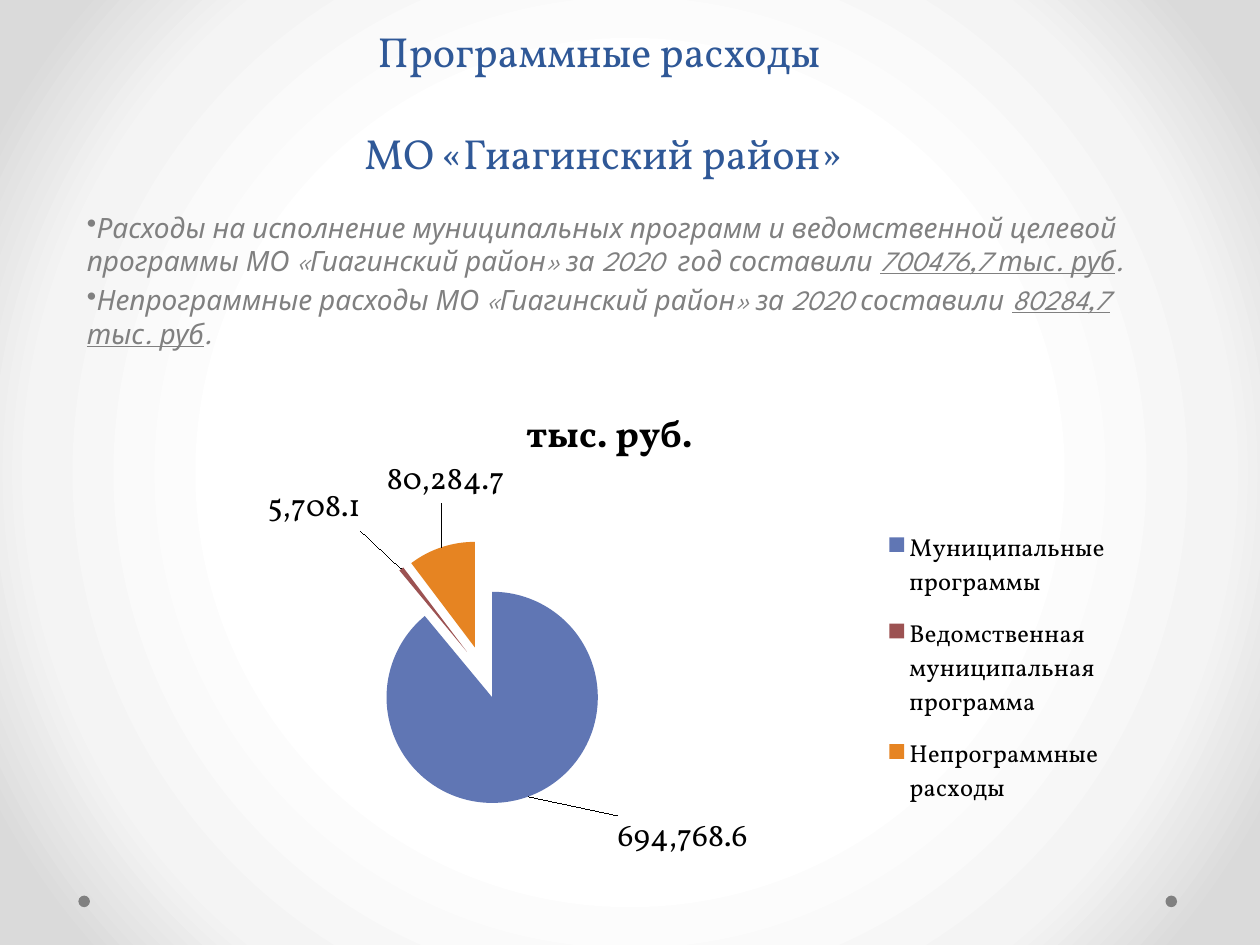
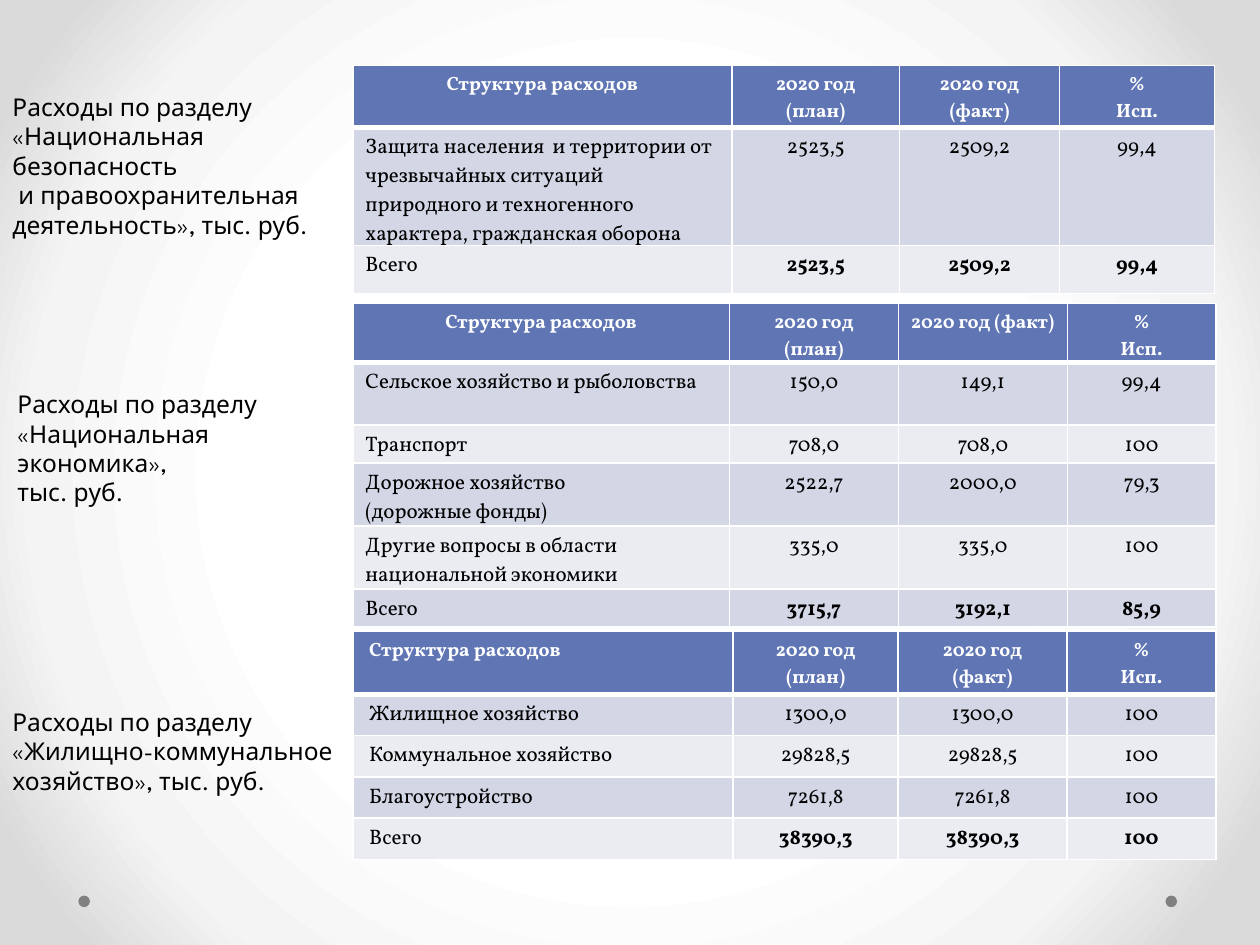
from dataclasses import dataclass

from lxml import etree
from pptx import Presentation
from pptx import util as u
from pptx.chart import data as cd
from pptx.dml.color import RGBColor
from pptx.enum import chart as ce
from pptx.enum import shapes, text
from pptx.oxml import parse_xml
from pptx.oxml import ns

Pt = u.Pt


@dataclass(frozen=True)
class Theme:
    """Colours, fonts and type sizes of the deck."""
    serif: str = "Vollkorn"
    sans: str = "League Spartan"
    title: str = "2F5897"
    grey: str = "808080"
    black: str = "000000"
    white: str = "FFFFFF"
    blue: str = "6076B4"
    red: str = "9C5252"
    orange: str = "E68422"
    bands: tuple = ("D2D6E5", "EAECF2")
    glow: tuple = ((50, "FFFFFF"), (76, "F4F4F4"), (92, "DADADA"))
    sz_title: float = 24
    sz_chart_title: float = 21.6
    sz_chart: float = 18
    sz_body: float = 16
    sz_label: float = 14
    sz_cell: float = 12
    sz_head: float = 11


T = Theme()
LEFT, CENTER = text.PP_ALIGN.LEFT, text.PP_ALIGN.CENTER
TABLE_X = 201.6

SECTIONS = [
    dict(
        label="Расходы по разделу «Национальная\nбезопасность\n"
              " и правоохранительная деятельность», тыс. руб.",
        label_box=(0, 49, 226.8, 92), top=37.4, inset=7.2, head_align=CENTER,
        cols=(216.7, 95.8, 91.4, 88.6), heights=(35.3, 67.7, 27.4),
        rows=[
            ("Структура расходов", "2020 год (план)", "2020 год (факт)", "%\nИсп."),
            ("Защита населения  и территории от чрезвычайных ситуаций природного "
             "и техногенного характера, гражданская оборона", "2523,5", "2509,2", "99,4"),
            ("Всего", "2523,5", "2509,2", "99,4"),
        ]),
    dict(
        label="Расходы по разделу «Национальная\nэкономика»,\nтыс. руб.",
        label_box=(2.9, 218.9, 221, 75), top=173.5, inset=7.2, head_align=CENTER,
        cols=(215.3, 96.5, 96.5, 85), heights=(33.1, 35.8, 21.5, 35.8, 35.8, 21.5),
        rows=[
            ("Структура расходов", "2020 год\n(план)", "2020 год (факт)", "%\nИсп."),
            ("Сельское хозяйство и рыболовства", "150,0", "149,1", "99,4"),
            ("Транспорт", "708,0", "708,0", "100"),
            ("Дорожное хозяйство\n(дорожные фонды)", "2522,7", "2000,0", "79,3"),
            ("Другие вопросы в области национальной экономики", "335,0", "335,0", "100"),
            ("Всего", "3715,7", "3192,1", "85,9"),
        ]),
    dict(
        label="Расходы по разделу\v«Жилищно-коммунальное\nхозяйство», тыс. руб.",
        label_box=(0, 400.3, 360, 58), top=360.7, inset=9.4, head_align=LEFT,
        cols=(217.4, 94.3, 96.5, 85), heights=(36,) + (23.6,) * 4,
        rows=[
            ("Структура расходов", "2020 год\n(план)", "2020 год (факт)", "%\nИсп."),
            ("Жилищное хозяйство", "1300,0", "1300,0", "100"),
            ("Коммунальное хозяйство", "29828,5", "29828,5", "100"),
            ("Благоустройство", "7261,8", "7261,8", "100"),
            ("Всего", "38390,3", "38390,3", "100"),
        ]),
]

EXPENSES = [
    ("Расходы на исполнение муниципальных программ и ведомственной целевой программы "
     "МО «Гиагинский район» за 2020  год составили ", "700476,7 тыс. руб"),
    ("Непрограммные расходы МО «Гиагинский район» за 2020 составили ", "80284,7 тыс. руб"),
]

SLICES = [
    ("Муниципальные программы", 694768.6, T.blue, (0.08, 0.025)),
    ("Ведомственная муниципальная программа", 5708.1, T.red, (-0.033, -0.066)),
    ("Непрограммные расходы", 80284.7, T.orange, (0.06, -0.075)),
]


def rgb(color):
    """Return a colour object for a hex string."""
    return RGBColor.from_string(color)


def style(font, name, size, color, bold=False, italic=False):
    """Set the look of a font."""
    font.name, font.size, font.bold, font.italic = name, Pt(size), bold, italic
    font.color.rgb = rgb(color)


def new_slide(prs):
    """Add a blank slide with the glowing background and two footer dots."""
    slide = prs.slides.add_slide(prs.slide_layouts[6])
    stops = "".join(f'<a:gs pos="{pos * 1000}"><a:srgbClr val="{color}"/></a:gs>'
                    for pos, color in T.glow)
    bg = parse_xml(
        f'<p:bg {ns.nsdecls("p", "a")}><p:bgPr><a:gradFill rotWithShape="1">'
        f'<a:gsLst>{stops}</a:gsLst><a:path path="circle">'
        '<a:fillToRect l="50000" t="50000" r="50000" b="50000"/></a:path>'
        '</a:gradFill><a:effectLst/></p:bgPr></p:bg>')
    slide._element.cSld.insert(0, bg)
    for x in (44.8, 666):
        dot = slide.shapes.add_shape(shapes.MSO_SHAPE.OVAL, Pt(x), Pt(511.8), Pt(6.6), Pt(6.6))
        dot.shadow.inherit = False
        dot.fill.solid()
        dot.fill.fore_color.rgb = rgb(T.grey)
        dot.line.fill.background()
    return slide


def add_text(slide, box, content=""):
    """Add a wrapping text box and return its frame."""
    tf = slide.shapes.add_textbox(*map(Pt, box)).text_frame
    tf.word_wrap = True
    tf.text = content
    return tf


def add_title(slide, box, content):
    """Add the slide title, standing on the bottom of its box."""
    tf = add_text(slide, box, content)
    tf.vertical_anchor = text.MSO_ANCHOR.BOTTOM
    p = tf.paragraphs[0]
    p.alignment, p.line_spacing = CENTER, Pt(58)
    style(p.font, T.serif, T.sz_title, T.title)


def add_expenses(slide, box):
    """Add the bulleted statements with underlined sums."""
    tf = add_text(slide, box)
    for i, (lead, total) in enumerate(EXPENSES):
        p = tf.add_paragraph() if i else tf.paragraphs[0]
        p.space_before = Pt(3.2)
        style(p.font, T.sans, T.sz_body, T.grey, italic=True)
        pPr = p._p.get_or_add_pPr()
        bullet = etree.Element(ns.qn("a:buChar"), char="•")
        pPr.insert_element_before(bullet, "a:tabLst", "a:defRPr", "a:extLst")
        for part in (lead, total, "."):
            r = p.add_run()
            r.text = part
            style(r.font, T.sans, T.sz_body, T.grey, italic=True)
            r.font.underline = part == total


def manual_layout(x, y, w=None, h=None, inner=False):
    """Return a chart layout given as shares of the chart area."""
    tags = [("layoutTarget", "inner")] if inner else []
    if w:
        tags += [("xMode", "edge"), ("yMode", "edge")]
    tags += [("x", x), ("y", y)]
    if w:
        tags += [("w", w), ("h", h)]
    body = "".join(f'<c:{tag} val="{val}"/>' for tag, val in tags)
    return parse_xml(f'<c:layout {ns.nsdecls("c")}><c:manualLayout>{body}'
                     '</c:manualLayout></c:layout>')


def set_layout(el, layout, index):
    """Replace the layout of a chart element."""
    for old in el.findall(ns.qn("c:layout")):
        el.remove(old)
    el.insert(index, layout)


def add_pie(slide, box):
    """Add the exploded pie of expenses with its title and legend."""
    data = cd.CategoryChartData(number_format="#,##0.0")
    data.categories = [name for name, *_ in SLICES]
    data.add_series("тыс. руб.", [value for _, value, *_ in SLICES])
    chart = slide.shapes.add_chart(ce.XL_CHART_TYPE.PIE, *map(Pt, box), data).chart
    style(chart.font, T.serif, T.sz_chart, T.black)
    chart.has_title = True
    chart.chart_title.text_frame.text = "тыс. руб."
    style(chart.chart_title.text_frame.paragraphs[0].font,
          T.serif, T.sz_chart_title, T.black, bold=True)
    chart.has_legend = True
    legend = chart.legend
    legend.position, legend.include_in_layout = ce.XL_LEGEND_POSITION.RIGHT, False
    style(legend.font, T.serif, T.sz_label, T.black)
    set_layout(legend._element, manual_layout(0.74, 0.27, 0.23, 0.64), 1)
    plot = chart.plots[0]
    plot.vary_by_categories = True
    set_layout(plot._element.getparent(),
               manual_layout(0.263, 0.323, 0.242, 0.545, inner=True), 0)
    plot.has_data_labels = True
    labels = plot.data_labels
    labels.show_value, labels.show_percentage = True, False
    labels.number_format, labels.number_format_is_linked = "#,##0.0", False
    series = plot.series[0]
    for i, (_, _, color, shift) in enumerate(SLICES):
        point = series.points[i]
        point.format.fill.solid()
        point.format.fill.fore_color.rgb = rgb(color)
        point.data_label.position = ce.XL_LABEL_POSITION.OUTSIDE_END
    for dLbl, (*_, shift) in zip(series._element.iter(ns.qn("c:dLbl")), SLICES):
        set_layout(dLbl, manual_layout(*shift), 1)
    explosion = etree.Element(ns.qn("c:explosion"), val="25")
    series._element.find(ns.qn("c:dPt")).addprevious(explosion)


def set_borders(cell, bottom):
    """Draw white borders around a cell."""
    tcPr = cell._tc.get_or_add_tcPr()
    for i, (side, width) in enumerate(zip("LRTB", (1, 1, 1, bottom))):
        tcPr.insert(i, parse_xml(
            f'<a:ln{side} {ns.nsdecls("a")} w="{Pt(width)}"><a:solidFill>'
            f'<a:srgbClr val="{T.white}"/></a:solidFill></a:ln{side}>'))


def fill_cell(cell, content, head, bold, align, color, inset):
    """Write one table cell."""
    cell.text = content
    cell.margin_left = cell.margin_right = Pt(inset)
    cell.fill.solid()
    cell.fill.fore_color.rgb = rgb(color)
    for p in cell.text_frame.paragraphs:
        p.alignment = align
        style(p.font, T.serif, T.sz_head if head else T.sz_cell,
              T.white if head else T.black, bold)
    set_borders(cell, 3 if head else 1)


def add_section(slide, x, sec):
    """Add a section label and its table of plan and fact."""
    for p in add_text(slide, sec["label_box"], sec["label"]).paragraphs:
        style(p.font, T.sans, T.sz_label, T.black)
    rows, cols, heights = sec["rows"], sec["cols"], sec["heights"]
    table = slide.shapes.add_table(len(rows), len(cols), Pt(x), Pt(sec["top"]),
                                   Pt(sum(cols)), Pt(sum(heights))).table
    for col, width in zip(table.columns, cols):
        col.width = Pt(width)
    for i, (row, height, values) in enumerate(zip(table.rows, heights, rows)):
        row.height = Pt(height)
        head, total = i == 0, i == len(rows) - 1
        color = T.blue if head else T.bands[(i - 1) % 2]
        for j, (cell, value) in enumerate(zip(row.cells, values)):
            first = sec["head_align"] if head else LEFT
            fill_cell(cell, value, head, head or (total and j > 0),
                      CENTER if j else first, color, sec["inset"])


def program_slide(prs):
    """Build the slide on programme expenses."""
    slide = new_slide(prs)
    add_title(slide, (48.2, 15.1, 588.2, 90), "Программные расходы\v МО «Гиагинский район»")
    add_expenses(slide, (42.5, 116.6, 635, 118.8))
    add_pie(slide, (36.7, 218.9, 623.5, 277.9))


def sections_slide(prs):
    """Build the slide on expenses by section."""
    slide = new_slide(prs)
    for sec in SECTIONS:
        add_section(slide, TABLE_X, sec)


def main():
    """Build and save the deck."""
    prs = Presentation()
    prs.slide_width, prs.slide_height = Pt(720), Pt(540)
    program_slide(prs)
    sections_slide(prs)
    prs.save("out.pptx")


if __name__ == "__main__":
    main()
